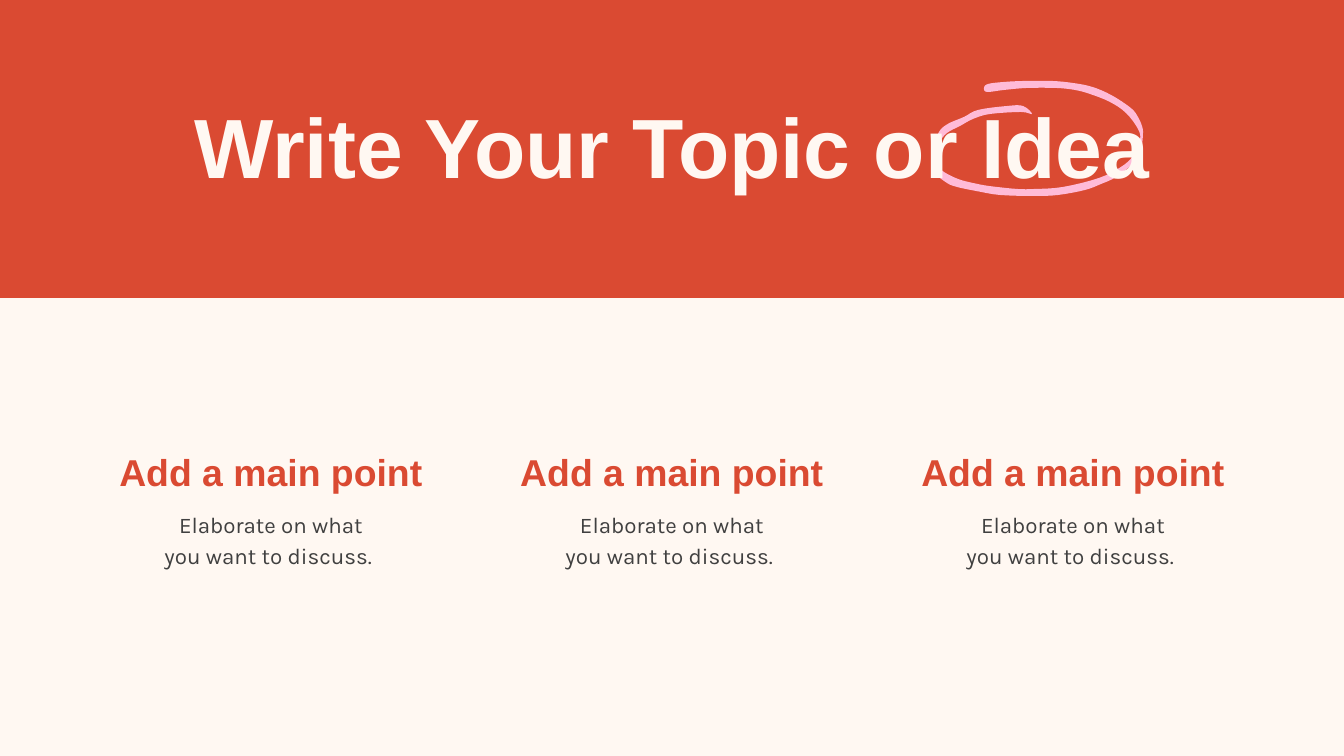
"""Build a topic slide with a red title band and three main points."""
from typing import NamedTuple

from pptx import Presentation, util as u
from pptx.dml.color import RGBColor
from pptx.enum import shapes, text

PX = 914400 / 134.4
CREAM = RGBColor(0xFF, 0xF8, 0xF2)
RED = RGBColor(0xDA, 0x4A, 0x32)
PINK = RGBColor(0xFF, 0xBB, 0xD8)
GRAY = RGBColor(0x40, 0x40, 0x40)
STEPS = 4

SCRIBBLE = [
    (1032, 114), (1021, 112), (990, 114), (973, 119), (960, 126), (947, 133),
    (939, 143), (935, 157), (940, 167), (944, 172), (958, 179), (973, 183),
    (989, 186), (1017, 189), (1035, 189), (1063, 187), (1099, 178),
    (1121, 167), (1133, 156), (1140, 140), (1138, 129), (1126, 113),
    (1110, 102), (1090, 94), (1075, 90), (1056, 88), (1027, 88), (1004, 90),
    (987, 92), (984, 88), (988, 84), (1004, 82), (1024, 81), (1052, 81),
    (1073, 83), (1089, 86), (1103, 91), (1118, 99), (1132, 109), (1138, 117),
    (1142, 126), (1143, 134), (1141, 151), (1136, 161), (1116, 177),
    (1101, 184), (1085, 190), (1058, 195), (1034, 196), (1000, 195),
    (976, 191), (957, 187), (947, 183), (935, 173), (931, 161), (937, 136),
    (946, 125), (964, 117), (978, 110), (1007, 106), (1023, 106),
]


class Box(NamedTuple):
    x: int
    y: int
    w: int
    h: int


class Point(NamedTuple):
    heading: str
    body: list[str]


POINTS = [Point("Add a main point", ["Elaborate on what", "you want to discuss. "])] * 3
FIRST_X, PITCH, COLUMN_W = 112, 401, 318


def px(n: float) -> u.Emu:
    """Turn pixels into EMU."""
    return u.Emu(round(n * PX))


def paint(sp, color: RGBColor) -> None:
    """Give a shape a flat fill with no line or shadow."""
    sp.shadow.inherit = False
    sp.fill.solid()
    sp.fill.fore_color.rgb = color
    sp.line.fill.background()


def add_text(parent, box: Box, lines: list[str], *, size: int, color: RGBColor,
             font: str = "Arial", bold: bool = False, spacing: float = 1.0) -> None:
    """Add a centred text box with one paragraph per line."""
    tf = parent.add_textbox(*map(px, box)).text_frame
    tf.word_wrap = True
    tf.auto_size = text.MSO_AUTO_SIZE.SHAPE_TO_FIT_TEXT
    tf.margin_left = tf.margin_right = tf.margin_top = tf.margin_bottom = 0
    for i, line in enumerate(lines):
        p = tf.add_paragraph() if i else tf.paragraphs[0]
        p.alignment = text.PP_ALIGN.CENTER
        p.line_spacing = spacing
        r = p.add_run()
        r.text = line
        r.font.name, r.font.size, r.font.bold = font, u.Pt(size), bold
        r.font.color.rgb = color


def spline(a: int, b: int, c: int, d: int, t: float) -> float:
    """Interpolate from b to c on a Catmull-Rom curve."""
    return b + t / 2 * (c - a + t * (2 * a - 5 * b + 4 * c - d
                                     + t * (3 * (b - c) + d - a)))


def add_scribble(parent, anchors: list[tuple[int, int]], color: RGBColor) -> None:
    """Draw a smooth closed outline through the anchors."""
    curve = []
    for i in range(len(anchors)):
        near = [anchors[(i + k) % len(anchors)] for k in (-1, 0, 1, 2)]
        xs, ys = zip(*near)
        curve += [(px(spline(*xs, n / STEPS)), px(spline(*ys, n / STEPS)))
                  for n in range(STEPS)]
    outline = parent.build_freeform(*curve[0])
    outline.add_line_segments(curve[1:], close=True)
    paint(outline.convert_to_shape(), color)


def add_point(parent, x: int, point: Point) -> None:
    """Add a grouped heading and body."""
    group = parent.add_group_shape().shapes
    add_text(group, Box(x, 507, COLUMN_W, 58), point.body,
             size=12, color=GRAY, font="Karla", spacing=1.15)
    add_text(group, Box(x, 449, COLUMN_W, 46), [point.heading],
             size=20, color=RED, bold=True)


def main() -> None:
    """Build and save the slide."""
    prs = Presentation()
    prs.slide_width, prs.slide_height = px(1344), px(756)
    s = prs.slides.add_slide(prs.slide_layouts[6])
    s.background.fill.solid()
    s.background.fill.fore_color.rgb = CREAM

    band = Box(0, 0, 1344, 298)
    paint(s.shapes.add_shape(shapes.MSO_SHAPE.RECTANGLE, *map(px, band)), RED)
    add_scribble(s.shapes, SCRIBBLE, PINK)
    add_text(s.shapes, Box(188, 95, 968, 102), ["Write Your Topic or Idea"],
             size=45, color=CREAM, bold=True)
    for i, point in enumerate(POINTS):
        add_point(s.shapes, FIRST_X + i * PITCH, point)
    prs.save("out.pptx")


if __name__ == "__main__":
    main()
